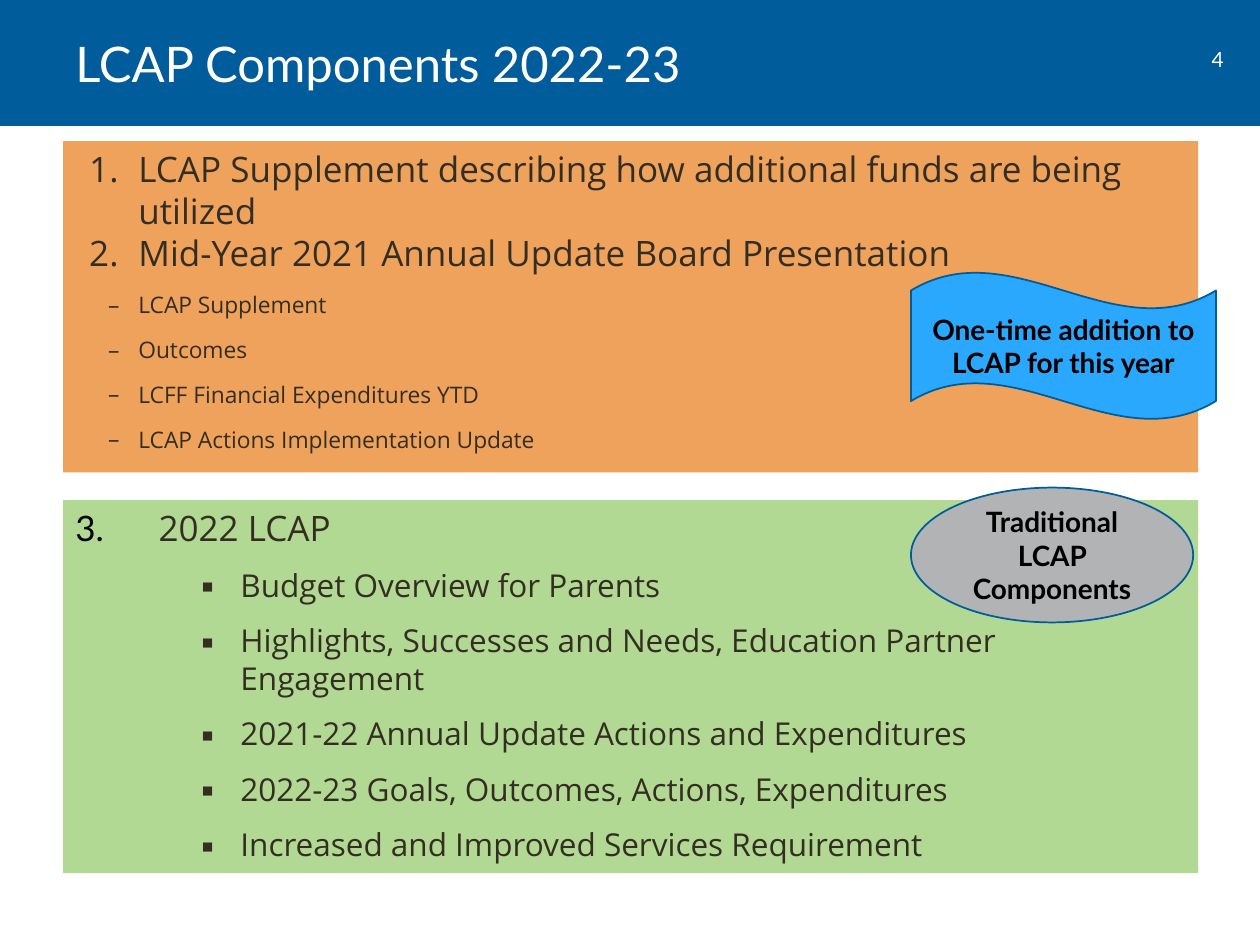
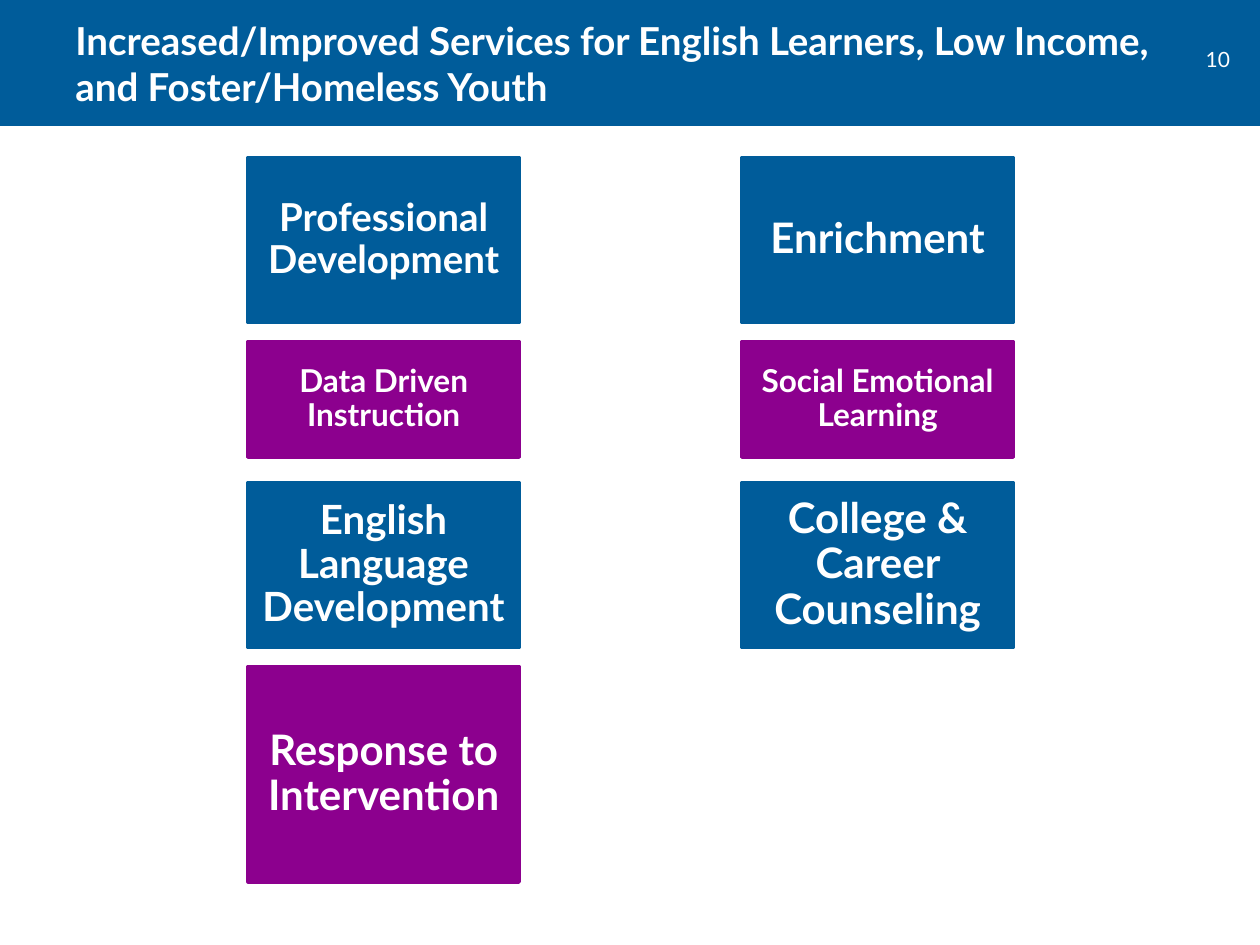
from dataclasses import dataclass
from lxml import etree
from pptx import Presentation
from pptx.dml.color import RGBColor
from pptx.enum.shapes import MSO_SHAPE
from pptx.enum.text import MSO_ANCHOR, PP_ALIGN
from pptx.oxml.ns import qn
from pptx.util import Inches, Pt

RECTANGLE, WAVE, OVAL = MSO_SHAPE.RECTANGLE, MSO_SHAPE.WAVE, MSO_SHAPE.OVAL
TOP, MIDDLE = MSO_ANCHOR.TOP, MSO_ANCHOR.MIDDLE
LEFT, CENTER = PP_ALIGN.LEFT, PP_ALIGN.CENTER


@dataclass(frozen=True)
class Theme:
    heading_font: str = "Lato"
    body_font: str = "Open Sans"
    blue: str = "005C9A"
    purple: str = "8C008E"
    orange: str = "EEA25C"
    green: str = "B2D993"
    sky: str = "29A8FE"
    gray: str = "B2B3B4"
    ink: str = "342E22"
    black: str = "000000"
    white: str = "FFFFFF"
    number_size: int = 12
    list_size: int = 20
    bullet_size: int = 18
    dash_size: int = 13
    callout_size: int = 16
    space_before: int = 10


THEME = Theme()

COMPONENTS = {"title": "LCAP Components 2022-23", "number": "4", "size": 28, "bold": False}
SERVICES = {
    "title": "Increased/Improved Services for English Learners, Low Income, and Foster/Homeless Youth",
    "number": "10", "size": 22, "bold": True,
}
ONE_TIME_ITEMS = [
    "LCAP Supplement describing how additional funds are being utilized",
    "Mid-Year 2021 Annual Update Board Presentation",
]
PRESENTATION_PARTS = [
    "LCAP Supplement",
    "Outcomes",
    "LCFF Financial Expenditures YTD",
    "LCAP Actions Implementation Update",
]
PLAN_NUMBER, PLAN_NAME = "3.", "2022 LCAP"
PLAN_PARTS = [
    "Budget Overview for Parents",
    "Highlights, Successes and Needs, Education Partner Engagement",
    "2021-22 Annual Update Actions and Expenditures",
    "2022-23 Goals, Outcomes, Actions, Expenditures",
    "Increased and Improved Services Requirement",
]
CALLOUTS = [
    ("One-time addition to LCAP for this year", WAVE, THEME.sky, (7.23, 2.16, 2.42, 1.17)),
    ("Traditional LCAP Components", OVAL, THEME.gray, (7.23, 3.87, 2.24, 1.07)),
]
SERVICE_COLUMNS = [
    [("Professional Development", 22), ("Data Driven Instruction", 18),
     ("English Language Development", 23), ("Response to Intervention", 24)],
    [("Enrichment", 24), ("Social Emotional Learning", 18),
     ("College & Career Counseling", 24)],
]
COLUMN_LEFT, COLUMN_STEP, COLUMN_WIDTH = 1.97, 3.92, 2.15
SERVICE_ROWS = [(1.25, 1.31), (2.71, 0.92), (3.83, 1.31), (5.29, 1.71)]
ROW_COLORS = [THEME.blue, THEME.purple]


def color(value):
    return RGBColor.from_string(value)


def style(font, size, name, shade, bold=False):
    font.size, font.name, font.bold = Pt(size), name, bold
    font.color.rgb = color(shade)


def set_frame(box, anchor, side=0.1, edge=0.05):
    frame = box.text_frame
    frame.word_wrap = True
    frame.vertical_anchor = anchor
    frame.margin_left = frame.margin_right = Inches(side)
    frame.margin_top = frame.margin_bottom = Inches(edge)
    return frame


def add_box(page, place, fill, kind=RECTANGLE, line=None, width=1):
    box = page.shapes.add_shape(kind, *map(Inches, place))
    box.shadow.inherit = False
    box.fill.solid()
    box.fill.fore_color.rgb = color(fill)
    if line:
        box.line.color.rgb = color(line)
        box.line.width = Pt(width)
    else:
        box.line.fill.background()
    return box


def write(frame, text, size, shade, bold=False, align=CENTER):
    para = frame.paragraphs[0]
    para.text, para.alignment = text, align
    style(para.font, size, THEME.heading_font, shade, bold)
    return para


def next_para(frame):
    first = frame.paragraphs[0]
    para = first if not first.runs else frame.add_paragraph()
    para.alignment = LEFT
    return para


def add_list(frame, items, size, margin, hanging, mark=None, before=0):
    for text in items:
        para = next_para(frame)
        para.space_before = Pt(before)
        settings = para._p.get_or_add_pPr()
        settings.set("marL", str(Inches(margin)))
        settings.set("indent", str(-Inches(hanging)))
        bullet_color = etree.SubElement(settings, qn("a:buClr"))
        etree.SubElement(bullet_color, qn("a:srgbClr"), val=THEME.ink)
        etree.SubElement(settings, qn("a:buFont"), typeface=THEME.body_font)
        if mark:
            etree.SubElement(settings, qn("a:buChar"), char=mark)
        else:
            etree.SubElement(settings, qn("a:buAutoNum"), type="arabicPeriod")
        para.text = text
        style(para.font, size, THEME.body_font, THEME.ink)


def add_plan_heading(frame):
    para = next_para(frame)
    tabs = etree.SubElement(para._p.get_or_add_pPr(), qn("a:tabLst"))
    etree.SubElement(tabs, qn("a:tab"), pos=str(Inches(0.66)), algn="l")
    for text, name, shade in [(PLAN_NUMBER + "\t", THEME.heading_font, THEME.black),
                              (PLAN_NAME, THEME.body_font, THEME.ink)]:
        span = para.add_run()
        span.text = text
        style(span.font, THEME.list_size, name, shade)


def add_page(deck, header):
    page = deck.slides.add_slide(deck.slide_layouts[6])
    add_box(page, (0, 0, 10, 1), THEME.blue)
    number = page.shapes.add_textbox(*map(Inches, (9.44, 0.32, 0.45, 0.3)))
    write(set_frame(number, TOP), header["number"], THEME.number_size, THEME.white)
    title = page.shapes.add_textbox(*map(Inches, (0.5, 0, 8.91, 1)))
    write(set_frame(title, MIDDLE), header["title"], header["size"], THEME.white,
          header["bold"], LEFT)
    return page


def build_components(deck):
    page = add_page(deck, COMPONENTS)
    one_time = set_frame(add_box(page, (0.5, 1.12, 9.01, 2.63), THEME.orange), TOP)
    add_list(one_time, ONE_TIME_ITEMS, THEME.list_size, 0.5, 0.39)
    add_list(one_time, PRESENTATION_PARTS, THEME.dash_size, 0.5, 0.24, "–", THEME.space_before)
    plan = set_frame(add_box(page, (0.5, 3.97, 9.01, 2.96), THEME.green), TOP)
    add_plan_heading(plan)
    add_list(plan, PLAN_PARTS, THEME.bullet_size, 1.31, 0.31, "▪", THEME.space_before)
    for text, kind, fill, place in CALLOUTS:
        callout = add_box(page, place, fill, kind, THEME.blue)
        write(set_frame(callout, MIDDLE), text, THEME.callout_size, THEME.black, True)


def build_services(deck):
    page = add_page(deck, SERVICES)
    for column, services in enumerate(SERVICE_COLUMNS):
        left = COLUMN_LEFT + column * COLUMN_STEP
        for row, ((text, size), (top, height)) in enumerate(zip(services, SERVICE_ROWS)):
            fill = ROW_COLORS[row % 2]
            box = add_box(page, (left, top, COLUMN_WIDTH, height), fill, line=fill, width=2)
            para = write(set_frame(box, MIDDLE, 0.01, 0), text, size, THEME.white, True)
            para.line_spacing = 0.9


def main():
    deck = Presentation()
    deck.slide_width, deck.slide_height = Inches(10), Inches(7.5)
    build_components(deck)
    build_services(deck)
    deck.save("out.pptx")


if __name__ == "__main__":
    main()
